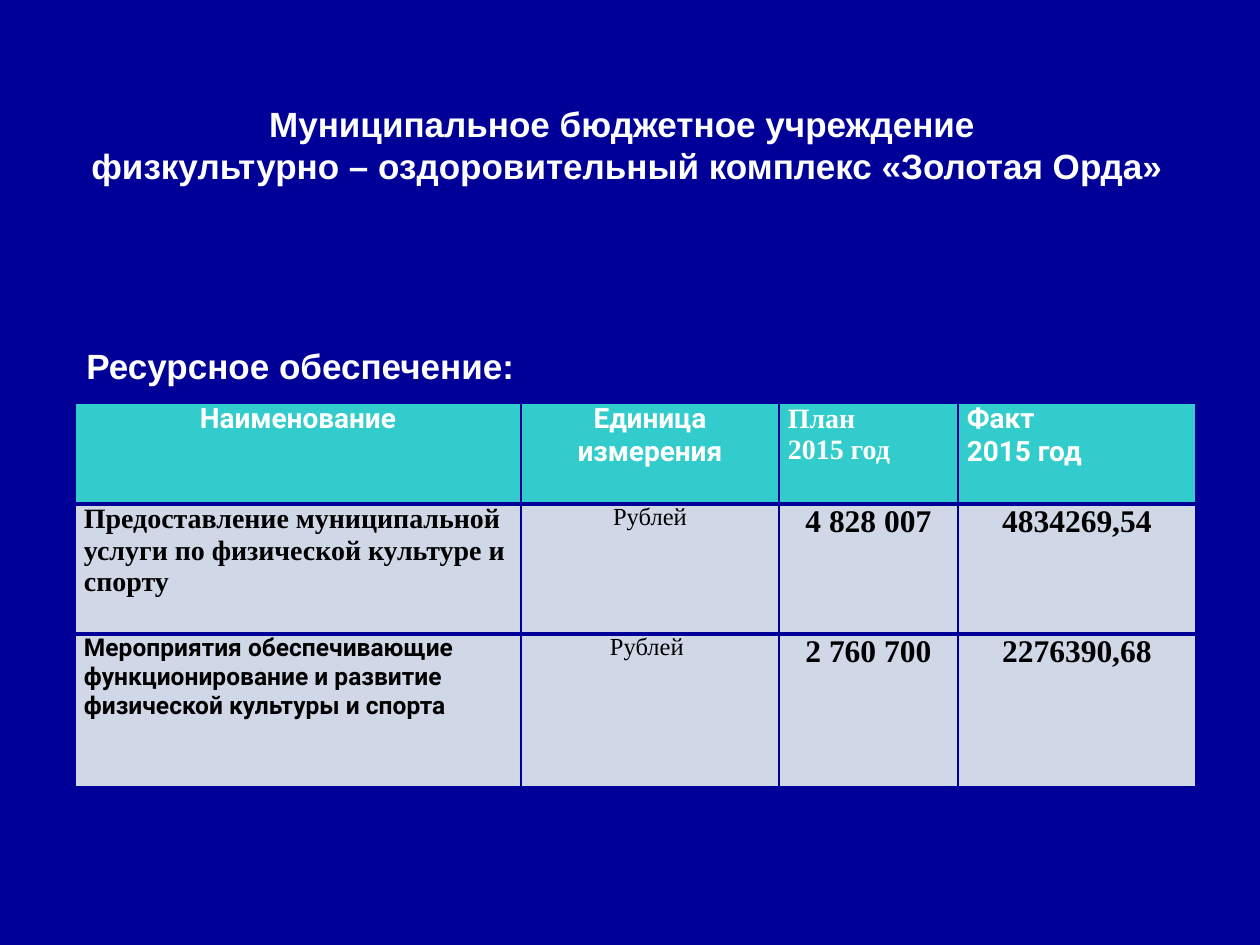
from pptx import Presentation
from pptx.dml.color import RGBColor
from pptx.enum.text import MSO_ANCHOR, MSO_AUTO_SIZE, PP_ALIGN
from pptx.oxml import parse_xml
from pptx.oxml.ns import nsdecls
from pptx.util import Pt

PX = 914400 // 126
HUES = {"navy": "000099", "teal": "33CCCC", "pale": "D0D8E8",
        "white": "FFFFFF", "black": "000000"}
SANS, SERIF, HEAD = "Arial", "Times New Roman", "Roboto"
LEFT, MID = PP_ALIGN.LEFT, PP_ALIGN.CENTER


def write(frame, lines, face, size, hue, bold=True, align=LEFT):
    frame.text = "\n".join(lines)
    for para in frame.paragraphs:
        para.alignment = align
        font = para.font
        font.name, font.size, font.bold = face, Pt(size), bold
        font.color.rgb = RGBColor.from_string(HUES[hue])


def edge(cell, side, width):
    cell._tc.get_or_add_tcPr().append(parse_xml(
        f'<a:{side} {nsdecls("a")} w="{Pt(width)}"><a:solidFill>'
        f'<a:srgbClr val="{HUES["navy"]}"/></a:solidFill></a:{side}>'))


deck = Presentation()
deck.slide_width, deck.slide_height = 1260 * PX, 945 * PX
slide = deck.slides.add_slide(deck.slide_layouts[5])
back = slide.background.fill
back.solid()
back.fore_color.rgb = RGBColor.from_string(HUES["navy"])

# Title
title = slide.shapes.title
title.left, title.top, title.width, title.height = (
    n * PX for n in (75, 96, 1104, 97))
frame = title.text_frame
frame.word_wrap = False
frame.auto_size = MSO_AUTO_SIZE.SHAPE_TO_FIT_TEXT
frame.vertical_anchor = MSO_ANCHOR.TOP
write(frame, ["Муниципальное бюджетное учреждение ",
              "физкультурно – оздоровительный комплекс «Золотая Орда»"],
      SANS, 20, "white", align=MID)

# Table heading
label = slide.shapes.add_textbox(74 * PX, 338 * PX, 794 * PX, 54 * PX)
label.text_frame.word_wrap = True
write(label.text_frame, ["Ресурсное обеспечение:"], SANS, 20, "white")

# Table: lines, font, size, bold, alignment
rows = [
    [(["Наименование"], HEAD, 16, True, MID),
     (["Единица измерения"], HEAD, 16, True, MID),
     (["План", "2015 год"], SERIF, 16, True, LEFT),
     (["Факт", "2015 год"], HEAD, 16, True, LEFT)],
    [(["Предоставление муниципальной услуги по физической культуре и спорту"],
      SERIF, 16, True, LEFT),
     (["Рублей"], SERIF, 14, False, MID),
     (["4 828 007"], SERIF, 18, True, MID),
     (["4834269,54"], SERIF, 18, True, MID)],
    [(["Мероприятия обеспечивающие функционирование и развитие "
       "физической культуры и спорта"], HEAD, 14, True, LEFT),
     (["Рублей "], SERIF, 14, False, MID),
     (["2 760 700"], SERIF, 18, True, MID),
     (["2276390,68"], SERIF, 18, True, MID)],
]
wide, high = [446, 258, 179, 238], [101, 130, 153]
table = slide.shapes.add_table(3, 4, 75 * PX, 403 * PX,
                               sum(wide) * PX, sum(high) * PX).table
for col, size in zip(table.columns, wide):
    col.width = size * PX
for r, row in enumerate(rows):
    table.rows[r].height = high[r] * PX
    for c, (lines, face, size, bold, align) in enumerate(row):
        cell = table.cell(r, c)
        cell.margin_left = cell.margin_right = 9 * PX
        cell.margin_top = cell.margin_bottom = 0
        write(cell.text_frame, lines, face, size,
              "black" if r else "white", bold, align)
        # Thick rules lie between rows, thin ones elsewhere
        for side, width in (("lnL", 1), ("lnR", 1), ("lnT", 3 if r else 1),
                            ("lnB", 3 if r < 2 else 1)):
            edge(cell, side, width)
        cell.fill.solid()
        cell.fill.fore_color.rgb = RGBColor.from_string(
            HUES["pale" if r else "teal"])

deck.save("out.pptx")
